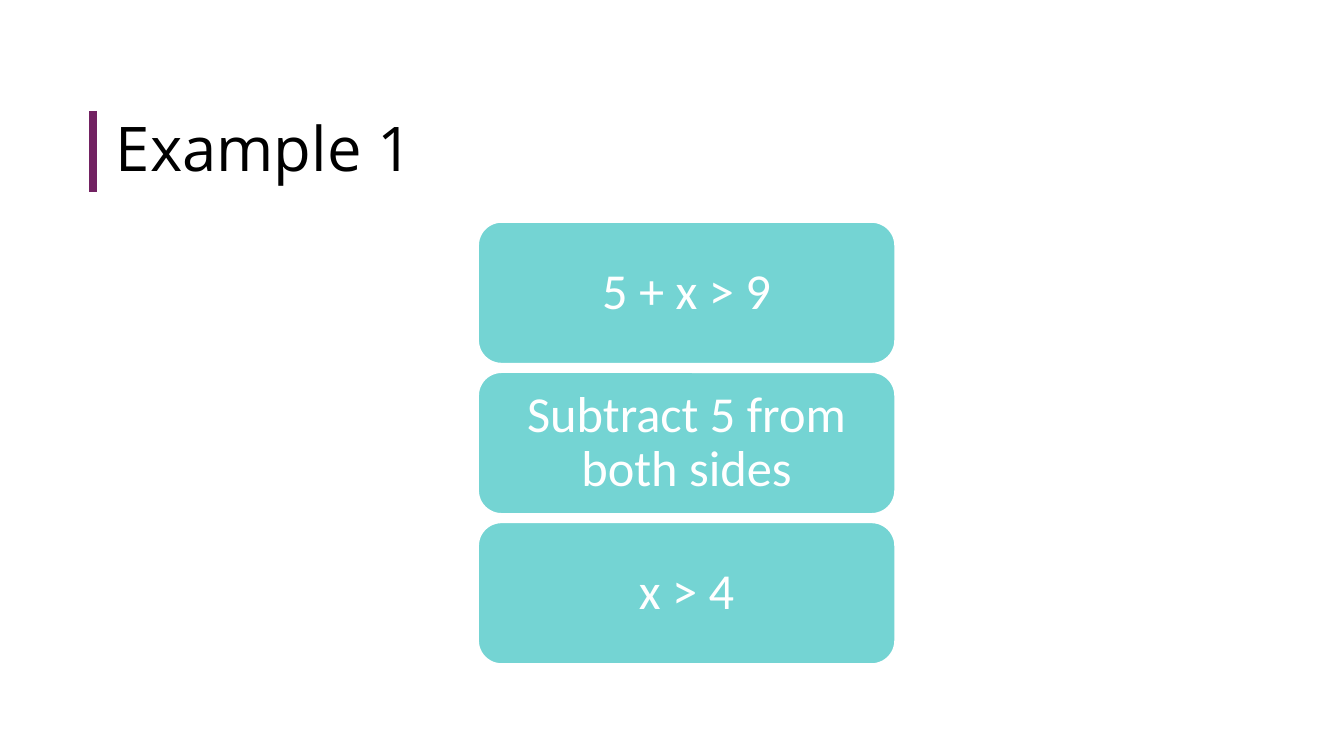
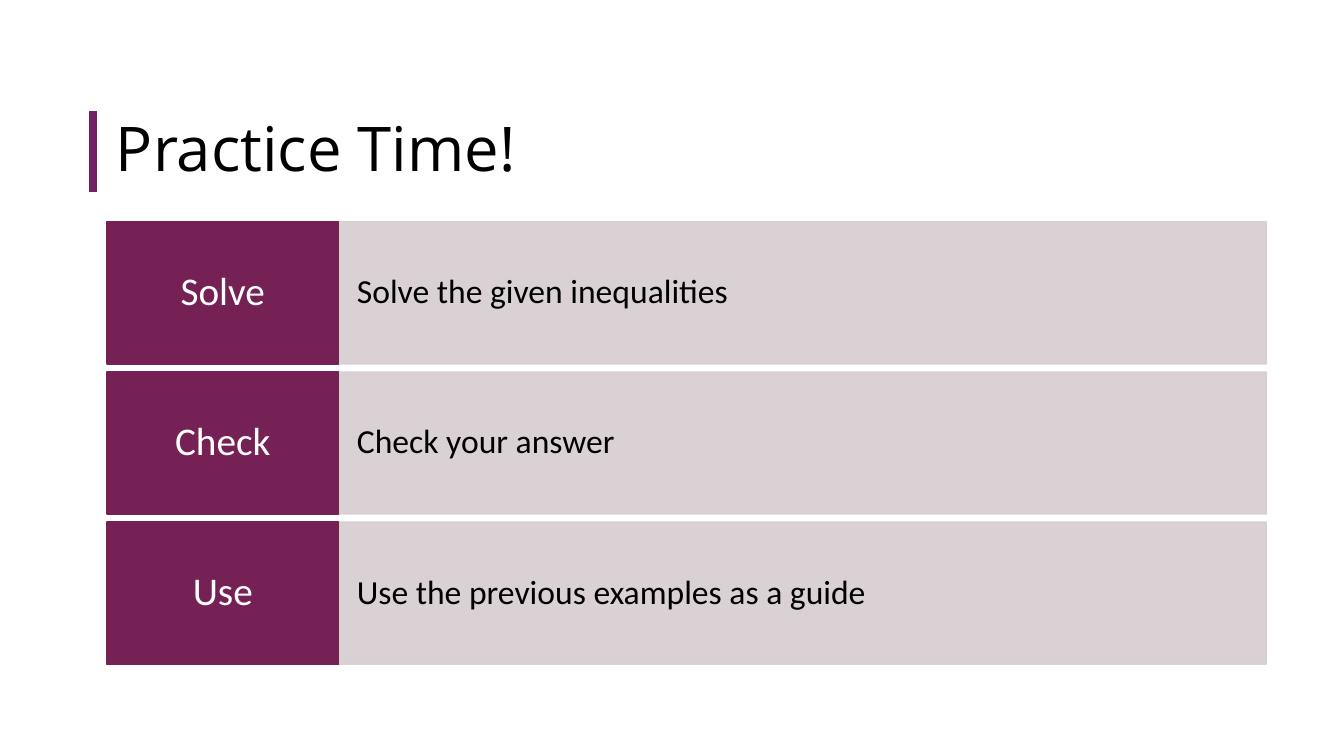
"""Build two maths slides: a worked example and a practice list."""
from dataclasses import dataclass

from pptx import Presentation
from pptx.dml.color import RGBColor
from pptx.enum.shapes import MSO_CONNECTOR as Link, MSO_SHAPE as Kind
from pptx.enum.text import MSO_ANCHOR as Anchor, MSO_AUTO_SIZE as Fit, PP_ALIGN as Align
from pptx.oxml.ns import qn
from pptx.util import Inches, Pt
from lxml.etree import SubElement

EXAMPLE = ("Example 1", ["5 + x > 9", "Subtract 5 from both sides", "x > 4"])
PRACTICE = ("Practice Time!", [
    ("Solve", "Solve the given inequalities"),
    ("Check", "Check your answer"),
    ("Use", "Use the previous examples as a guide"),
])


@dataclass(frozen=True)
class Theme:
    plum: str = "752156"
    bar: str = "722262"
    teal: str = "74D4D3"
    mist: str = "D6CDD1"
    white: str = "FFFFFF"
    black: str = "000000"
    head: str = "Open Sans"
    body: str = "Calibri"
    title: int = 44
    step: int = 36
    label: int = 28
    note: int = 24


LOOK = Theme()
TOP, HIGH, PITCH = 2.2, 1.41, 1.49


def write(shape, text, size, color, font=LOOK.body, align=Align.CENTER, pad=(0.1, 0.05)):
    frame = shape.text_frame
    frame.word_wrap = True
    frame.auto_size = Fit.NONE
    frame.vertical_anchor = Anchor.MIDDLE
    frame.margin_left = frame.margin_right = Inches(pad[0])
    frame.margin_top = frame.margin_bottom = Inches(pad[1])
    para = frame.paragraphs[0]
    para.alignment = align
    para.line_spacing = 0.9
    run = para.add_run()
    run.text = text
    run.font.size = Pt(size)
    run.font.name = font
    run.font.color.rgb = RGBColor.from_string(color)


def box(slide, row, left, width, fill, edge=None, weight=1, kind=Kind.RECTANGLE, alpha=None):
    shape = slide.shapes.add_shape(
        kind, Inches(left), Inches(TOP + row * PITCH), Inches(width), Inches(HIGH))
    shape.shadow.inherit = False
    shape.fill.solid()
    shape.fill.fore_color.rgb = RGBColor.from_string(fill)
    shape.line.color.rgb = RGBColor.from_string(edge or fill)
    shape.line.width = Pt(weight)
    if alpha:
        for color in shape._element.spPr.iter(qn("a:srgbClr")):
            SubElement(color, qn("a:alpha")).set("val", str(alpha * 1000))
    return shape


def start(deck, text):
    slide = deck.slides.add_slide(deck.slide_layouts[5])
    bar = slide.shapes.add_connector(
        Link.STRAIGHT, Inches(0.92), Inches(1.1), Inches(0.92), Inches(1.9))
    bar.line.color.rgb = RGBColor.from_string(LOOK.bar)
    bar.line.width = Pt(6)
    SubElement(bar._element.spPr, qn("a:effectLst"))
    title = slide.shapes.title
    title.left, title.top = Inches(1.05), Inches(1.1)
    title.width, title.height = Inches(11.5), Inches(0.8)
    write(title, text, LOOK.title, LOOK.black, font=LOOK.head, align=Align.LEFT)
    return slide


def example(deck, title, steps):
    slide = start(deck, title)
    for row, step in enumerate(steps):
        card = box(slide, row, 4.74, 4.14, LOOK.teal, edge=LOOK.white, weight=1.5,
                   kind=Kind.ROUNDED_RECTANGLE)
        write(card, step, LOOK.step, LOOK.white, pad=(0.15, 0.07))


def practice(deck, title, tasks):
    slide = start(deck, title)
    for row, (label, note) in enumerate(tasks):
        band = box(slide, row, 3.36, 9.2, LOOK.mist, alpha=90)
        write(band, note, LOOK.note, LOOK.black, align=Align.LEFT, pad=(0.18, 0.36))
        tab = box(slide, row, 1.06, 2.3, LOOK.plum)
        write(tab, label, LOOK.label, LOOK.white, pad=(0.12, 0.14))


def main():
    deck = Presentation()
    deck.slide_width, deck.slide_height = Inches(13.33), Inches(7.5)
    example(deck, *EXAMPLE)
    practice(deck, *PRACTICE)
    deck.save("out.pptx")


if __name__ == "__main__":
    main()
